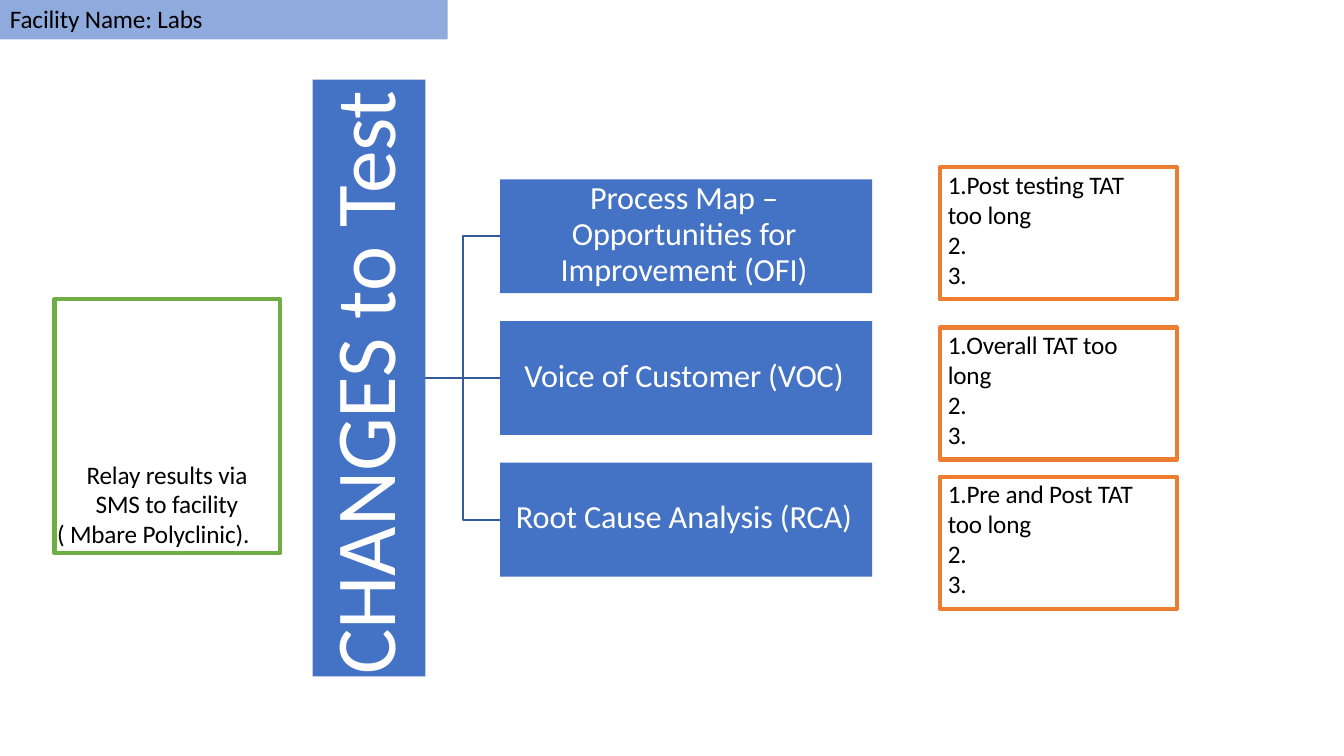
from dataclasses import dataclass

from lxml.etree import SubElement
from pptx import Presentation
from pptx.dml.color import RGBColor
from pptx.enum.shapes import MSO_CONNECTOR as Connector, MSO_SHAPE as Shape
from pptx.enum.text import MSO_ANCHOR as Anchor, PP_ALIGN as Align
from pptx.oxml.ns import qn
from pptx.util import Inches, Pt

BLUE = RGBColor(0x44, 0x72, 0xC4)
LIGHT_BLUE = RGBColor(0x8F, 0xAA, 0xDC)
LINK_BLUE = RGBColor(0x34, 0x59, 0x9C)
ORANGE = RGBColor(0xED, 0x7D, 0x31)
GREEN = RGBColor(0x70, 0xAD, 0x47)
WHITE = RGBColor(0xFF, 0xFF, 0xFF)
BLACK = RGBColor(0, 0, 0)

SOURCE_LEFT, SOURCE_TOP, SOURCE_PITCH = 4.96, 1.78, 1.405
SOURCE_WIDTH, SOURCE_HEIGHT = 3.69, 1.13
TRUNK_RIGHT, TRUNK_MIDDLE = 4.22, 3.75


@dataclass
class Box:
    left: float
    top: float
    width: float
    height: float
    lines: list[str]
    fill: RGBColor | None = None
    border: RGBColor | None = None
    color: RGBColor = BLACK
    size: float = 18
    align: Align = Align.LEFT
    anchor: Anchor = Anchor.MIDDLE
    insets: tuple[float, float, float, float] = (0, 0, 0, 0)
    spacing: float | Pt = 1.0


@dataclass
class Source:
    title: str
    finding: str
    finding_top: float


SOURCES = [
    Source("Process Map – Opportunities for Improvement (OFI)",
           "1.Post testing TAT too long", 1.66),
    Source("Voice of Customer (VOC)", "1.Overall TAT too long", 3.25),
    Source("Root Cause Analysis (RCA)", "1.Pre and Post TAT too long", 4.73),
]


def add_box(slide, box: Box):
    """Draw a rectangle with its text and return it."""
    shape = slide.shapes.add_shape(
        Shape.RECTANGLE, Inches(box.left), Inches(box.top),
        Inches(box.width), Inches(box.height))
    shape.shadow.inherit = False
    if box.fill is None:
        shape.fill.background()
    else:
        shape.fill.solid()
        shape.fill.fore_color.rgb = box.fill
    if box.border is None:
        shape.line.fill.background()
    else:
        shape.line.color.rgb = box.border
        shape.line.width = Pt(3)

    frame = shape.text_frame
    frame.word_wrap = True
    frame.vertical_anchor = box.anchor
    (frame.margin_left, frame.margin_top,
     frame.margin_right, frame.margin_bottom) = map(Inches, box.insets)
    for index, line in enumerate(box.lines):
        paragraph = frame.add_paragraph() if index else frame.paragraphs[0]
        paragraph.text = line
        paragraph.alignment = box.align
        paragraph.line_spacing = box.spacing
        paragraph.font.name = "Calibri"
        paragraph.font.size = Pt(box.size)
        paragraph.font.color.rgb = box.color
        # Slightly tightened letters
        paragraph.runs[0]._r.get_or_add_rPr().set("spc", "-10")
    return shape


def add_link(slide, end_y: float) -> None:
    """Join the trunk to one source box."""
    kind = Connector.STRAIGHT if end_y == TRUNK_MIDDLE else Connector.ELBOW
    link = slide.shapes.add_connector(
        kind, Inches(TRUNK_RIGHT), Inches(TRUNK_MIDDLE),
        Inches(SOURCE_LEFT), Inches(end_y))
    link.line.color.rgb = LINK_BLUE
    link.line.width = Pt(1.25)
    SubElement(link._element.spPr, qn("a:effectLst"))


def main() -> None:
    presentation = Presentation()
    presentation.slide_width = Inches(13.33)
    presentation.slide_height = Inches(7.5)
    slide = presentation.slides.add_slide(presentation.slide_layouts[6])

    # Links from the trunk to the sources
    for step in (1, 0, -1):
        add_link(slide, round(TRUNK_MIDDLE + step * SOURCE_PITCH, 3))

    # Trunk with upward text
    trunk = add_box(slide, Box(
        3.1, 0.79, 1.12, 5.92, ["CHANGES to Test"], fill=BLUE,
        color=WHITE, size=61, anchor=Anchor.TOP,
        insets=(0, 0.04, 0.1, 0.02), spacing=Pt(71.3)))
    trunk.text_frame._txBody.bodyPr.set("vert", "vert270")

    # Sources of change and their findings
    for row, source in enumerate(SOURCES):
        wraps = 0.45 if row == 0 else 0.1
        add_box(slide, Box(
            SOURCE_LEFT, SOURCE_TOP + row * SOURCE_PITCH,
            SOURCE_WIDTH, SOURCE_HEIGHT, [source.title], fill=BLUE,
            color=WHITE, size=23, align=Align.CENTER,
            insets=(wraps, 0, wraps + 0.04, 0.03), spacing=0.93))
        add_box(slide, Box(
            9.32, source.finding_top, 2.35, 1.31,
            [source.finding, "2.", "3."], border=ORANGE,
            anchor=Anchor.TOP, insets=(0.08, 0.02, 0.4, 0),
            spacing=Pt(21.4)))

    # Change to test
    change = add_box(slide, Box(
        0.54, 2.97, 2.24, 2.52,
        ["Relay results via SMS to facility", "( Mbare Polyclinic)."],
        border=GREEN, align=Align.CENTER, anchor=Anchor.BOTTOM,
        insets=(0, 0, 0.28, 0.05), spacing=Pt(21.2)))
    first_line = change.text_frame.paragraphs[0]
    first_line._p.get_or_add_pPr().set("marL", str(Inches(0.27)))

    # Facility band
    add_box(slide, Box(0, 0, 4.44, 0.39, ["Facility Name: Labs"],
                       fill=LIGHT_BLUE, insets=(0.1, 0, 0, 0.03)))

    presentation.save("out.pptx")


if __name__ == "__main__":
    main()
